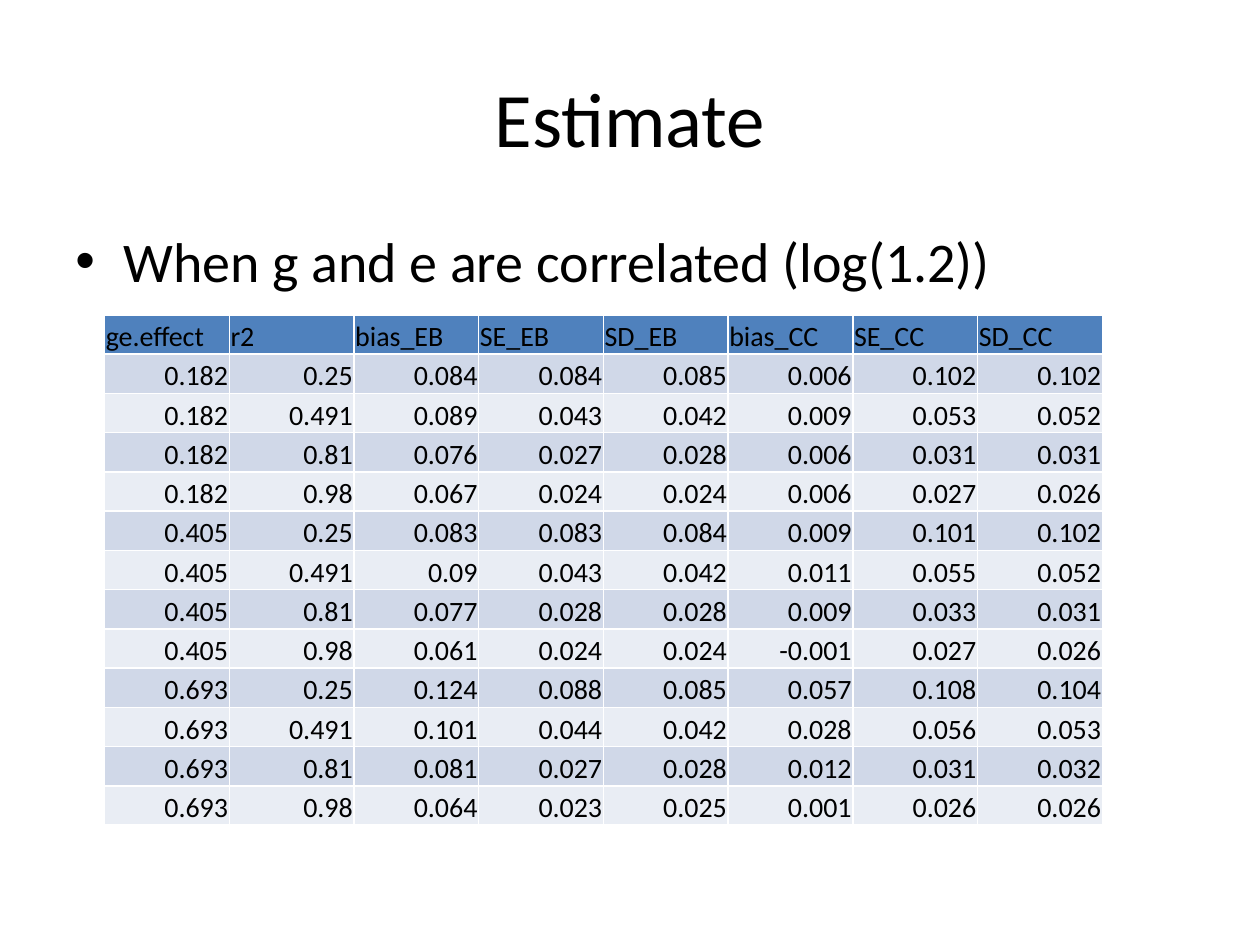
from lxml import etree
from pptx import Presentation
from pptx.dml.color import RGBColor
from pptx.enum.text import MSO_ANCHOR, PP_ALIGN
from pptx.oxml.ns import qn
from pptx.util import Inches, Pt

LEFT, CENTER, RIGHT = PP_ALIGN.LEFT, PP_ALIGN.CENTER, PP_ALIGN.RIGHT
MIDDLE, BOTTOM = MSO_ANCHOR.MIDDLE, MSO_ANCHOR.BOTTOM
TITLE_ONLY = 5
FONT = "Calibri"
COLORS = {
    "text": "000000",
    "header": "4F81BD",
    "band_dark": "D0D8E8",
    "band_light": "E9EDF4",
}

HEADERS = ["ge.effect", "r2", "bias_EB", "SE_EB", "SD_EB", "bias_CC", "SE_CC", "SD_CC"]
GE_EFFECTS = ["0.182", "0.405", "0.693"]
R2_VALUES = ["0.25", "0.491", "0.81", "0.98"]
# One row for each r2 value within each ge.effect
ESTIMATES = [
    ["0.084", "0.084", "0.085", "0.006", "0.102", "0.102"],
    ["0.089", "0.043", "0.042", "0.009", "0.053", "0.052"],
    ["0.076", "0.027", "0.028", "0.006", "0.031", "0.031"],
    ["0.067", "0.024", "0.024", "0.006", "0.027", "0.026"],
    ["0.083", "0.083", "0.084", "0.009", "0.101", "0.102"],
    ["0.09", "0.043", "0.042", "0.011", "0.055", "0.052"],
    ["0.077", "0.028", "0.028", "0.009", "0.033", "0.031"],
    ["0.061", "0.024", "0.024", "-0.001", "0.027", "0.026"],
    ["0.124", "0.088", "0.085", "0.057", "0.108", "0.104"],
    ["0.101", "0.044", "0.042", "0.028", "0.056", "0.053"],
    ["0.081", "0.027", "0.028", "0.012", "0.031", "0.032"],
    ["0.064", "0.023", "0.025", "0.001", "0.026", "0.026"],
]


def write(paragraph, text, size, alignment=LEFT):
    paragraph.alignment = alignment
    run = paragraph.add_run()
    run.text = text
    run.font.name = FONT
    run.font.size = Pt(size)
    run.font.bold = False
    run.font.color.rgb = RGBColor.from_string(COLORS["text"])


def place_title(slide, left, top, width, height):
    title = slide.shapes.title
    title.left, title.top, title.width, title.height = left, top, width, height
    title.text_frame.vertical_anchor = MIDDLE
    write(title.text_frame.paragraphs[0], "Estimate", 44, CENTER)


def add_bullet(paragraph, indent):
    properties = paragraph._p.get_or_add_pPr()
    properties.set("marL", str(indent))
    properties.set("indent", str(-indent))
    etree.SubElement(properties, qn("a:buFont")).set("typeface", "Arial")
    etree.SubElement(properties, qn("a:buChar")).set("char", "•")


def add_body(slide, left, top, width, height):
    body = slide.shapes.add_textbox(left, top, width, height)
    body.text_frame.word_wrap = True
    paragraph = body.text_frame.paragraphs[0]
    paragraph.space_before = Pt(6.4)
    write(paragraph, "When g and e are correlated (log(1.2))", 32)
    add_bullet(paragraph, Inches(0.38))


def fill_cell(cell, text, color, alignment):
    cell.fill.solid()
    cell.fill.fore_color.rgb = RGBColor.from_string(COLORS[color])
    cell.vertical_anchor = BOTTOM
    cell.margin_left = cell.margin_right = cell.margin_top = Inches(0.01)
    cell.margin_bottom = 0
    write(cell.text_frame.paragraphs[0], text, 16, alignment)


def add_estimates_table(slide, left, top, width, height):
    """Add the table; its default style draws the white cell borders."""
    keys = [[effect, r2] for effect in GE_EFFECTS for r2 in R2_VALUES]
    rows = [HEADERS] + [key + values for key, values in zip(keys, ESTIMATES)]
    table = slide.shapes.add_table(
        len(rows), len(HEADERS), left, top, width, height
    ).table
    for row_index, row in enumerate(rows):
        if row_index == 0:
            color, alignment = "header", LEFT
        else:
            color = "band_dark" if row_index % 2 else "band_light"
            alignment = RIGHT
        for column_index, text in enumerate(row):
            fill_cell(table.cell(row_index, column_index), text, color, alignment)


def main():
    presentation = Presentation()
    presentation.slide_width = Inches(10)
    presentation.slide_height = Inches(7.5)
    slide = presentation.slides.add_slide(presentation.slide_layouts[TITLE_ONLY])
    place_title(slide, Inches(0.5), Inches(0.3), Inches(9), Inches(1.25))
    add_body(slide, Inches(0.5), Inches(1.75), Inches(9), Inches(4.95))
    add_estimates_table(slide, Inches(0.83), Inches(2.5), Inches(7.92), Inches(4.05))
    presentation.save("out.pptx")


if __name__ == "__main__":
    main()
